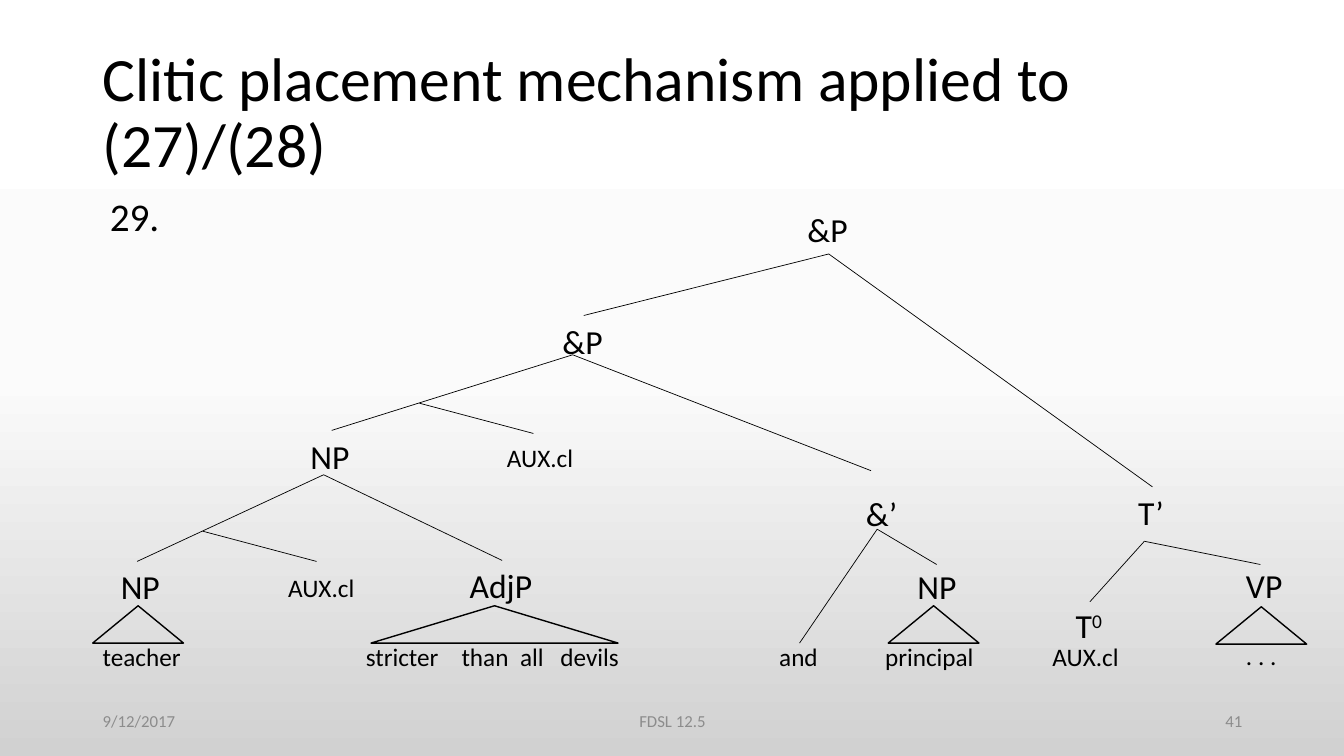
from copy import deepcopy

from lxml import etree
from pptx import Presentation
from pptx.dml.color import RGBColor
from pptx.enum.shapes import MSO_CONNECTOR, MSO_SHAPE
from pptx.enum.text import MSO_ANCHOR, MSO_AUTO_SIZE, PP_ALIGN
from pptx.oxml.ns import qn
from pptx.util import Inches, Pt

LEFT, CENTER, RIGHT = PP_ALIGN.LEFT, PP_ALIGN.CENTER, PP_ALIGN.RIGHT
TOP, MIDDLE = MSO_ANCHOR.TOP, MSO_ANCHOR.MIDDLE
TRIANGLE, STRAIGHT = MSO_SHAPE.ISOSCELES_TRIANGLE, MSO_CONNECTOR.STRAIGHT
FIXED = MSO_AUTO_SIZE.NONE

COLORS = {"ink": "000000", "muted": "8C8C8C",
          "sky": "FFFFFF", "mid": "FBFBFB", "ground": "D1D1D1"}
CELL = 0.1  # inches per grid column and row
SMALL, LEAF, NODE, NUMBER, TITLE = 12, 18, 24, 28, 44


def color(name):
    return RGBColor.from_string(COLORS[name])


def grid(*cells):
    """Turn columns and rows into slide lengths."""
    return [Inches(c * CELL) for c in cells]


def write(tf, text, size=NODE, ink="ink", align=LEFT, anchor=TOP,
          spacing=None, sup="", tabs=()):
    """Fill a text frame; sup is a raised ending, tabs are left stops in columns."""
    tf.word_wrap, tf.auto_size, tf.vertical_anchor = True, FIXED, anchor
    p = tf.paragraphs[0]
    p.alignment, p.line_spacing = align, spacing
    for part in filter(None, (text, sup)):
        r = p.add_run()
        r.text = part
        r.font.name, r.font.size = "Calibri", Pt(size)
        r.font.color.rgb = color(ink)
        if part == sup:
            r.font._element.set("baseline", "30000")
    if tabs:
        stops = etree.SubElement(p._p.get_or_add_pPr(), qn("a:tabLst"))
        for pos in grid(*tabs):
            etree.SubElement(stops, qn("a:tab"), pos=str(pos), algn="l")


class TreeSlide:
    def __init__(self, prs):
        self.s = prs.slides.add_slide(prs.slide_layouts[5])

    def background(self, *names):
        """Shade downwards through three evenly spaced colours."""
        fill = self.s.background.fill
        fill.gradient()
        fill.gradient_angle = 270
        first = next(self.s.element.iter(qn("a:gs")))
        first.addnext(deepcopy(first))
        for i, (stop, name) in enumerate(zip(fill.gradient_stops, names)):
            stop.color.rgb = color(name)
            stop.position = i / 2

    def title(self, text, *box):
        sp = self.s.shapes.title
        sp.left, sp.top, sp.width, sp.height = grid(*box)
        write(sp.text_frame, text, TITLE, anchor=MIDDLE, spacing=0.9)

    def text(self, text, x, y, w=9, h=5, **style):
        sp = self.s.shapes.add_textbox(*grid(x, y, w, h))
        write(sp.text_frame, text, **style)

    def branch(self, x1, y1, x2, y2):
        line = self.s.shapes.add_connector(STRAIGHT, *grid(x1, y1, x2, y2))
        line.line.color.rgb, line.line.width = color("ink"), Pt(0.5)
        etree.SubElement(line._element.spPr, qn("a:effectLst"))

    def triangle(self, apex, y, w=9, h=3.7):
        sp = self.s.shapes.add_shape(TRIANGLE, *grid(apex - w / 2, y, w, h))
        sp.shadow.inherit = False
        sp.fill.background()
        sp.line.color.rgb, sp.line.width = color("ink"), Pt(1)


NODES = [("&P", 79.1, 20.2), ("&P", 54.8, 31.3), ("NP", 29.8, 42.8),
         ("&’", 84.9, 48.4), ("T’", 111.9, 48.3), ("NP", 11, 55.7),
         ("AdjP", 45.6, 55.6), ("NP", 90, 55.7), ("VP", 122.6, 55.6)]
CLITICS = [(49.3, 43.4), (27.6, 56.3), (103.4, 63.1)]
# Branching point, then the ends of its branches
BRANCHES = [((82.2, 25.2), (57.9, 31.3), (114.3, 48.3)),
            ((56.8, 35.2), (32.9, 42.7), (86.4, 46.7)),
            ((41.6, 40), (52.9, 43)),
            ((32.1, 47.1), (13.6, 55.7), (49.8, 55.6)),
            ((20.1, 52.7), (31.4, 55.7)),
            ((87, 52.5), (79.3, 63.8), (92.9, 56)),
            ((113.5, 53.7), (108.1, 59.7), (125, 56))]
TRIANGLES = [(13.7, 60.1, 9), (49.05, 60.1, 24.5),
             (92.6, 60.1, 9), (125.1, 60.2, 9)]
LEAVES = ["teacher", "stricter", "than", "all", "devils", "and", "principal"]
LEAF_TABS = [26.1, 35.6, 41.4, 45.4, 67.1, 77.6]
FOOTER = [("9/12/2017", 9.2, 30, LEFT), ("FDSL 12.5", 44.2, 45, CENTER),
          ("41", 94.2, 30, RIGHT)]


def main():
    prs = Presentation()
    prs.slide_width, prs.slide_height = Inches(13.33), Inches(7.5)
    tree = TreeSlide(prs)
    tree.background("sky", "mid", "ground")
    tree.title("Clitic placement mechanism applied to (27)/(28)",
               9.2, 4.1, 120.5, 14.5)
    tree.text("29.", 9.9, 18.6, 11.5, 5.7, size=NUMBER)

    for start, *ends in BRANCHES:
        for end in ends:
            tree.branch(*start, *end)
    for apex, y, w in TRIANGLES:
        tree.triangle(apex, y, w)
    for label, x, y in NODES:
        tree.text(label, x, y)
    tree.text("T", 105.7, 59.5, sup="0")
    for x, y in CLITICS:
        tree.text("AUX.cl", x, y, h=4, size=LEAF)
    tree.text("\t".join(LEAVES), 9.2, 63.1, 90.7, 4, size=LEAF, tabs=LEAF_TABS)
    tree.text(". . .", 122.6, 63, 6, 4, size=LEAF)
    for label, x, w, align in FOOTER:
        tree.text(label, x, 69.5, w, 4, size=SMALL, ink="muted",
                  align=align, anchor=MIDDLE)
    prs.save("out.pptx")


if __name__ == "__main__":
    main()
